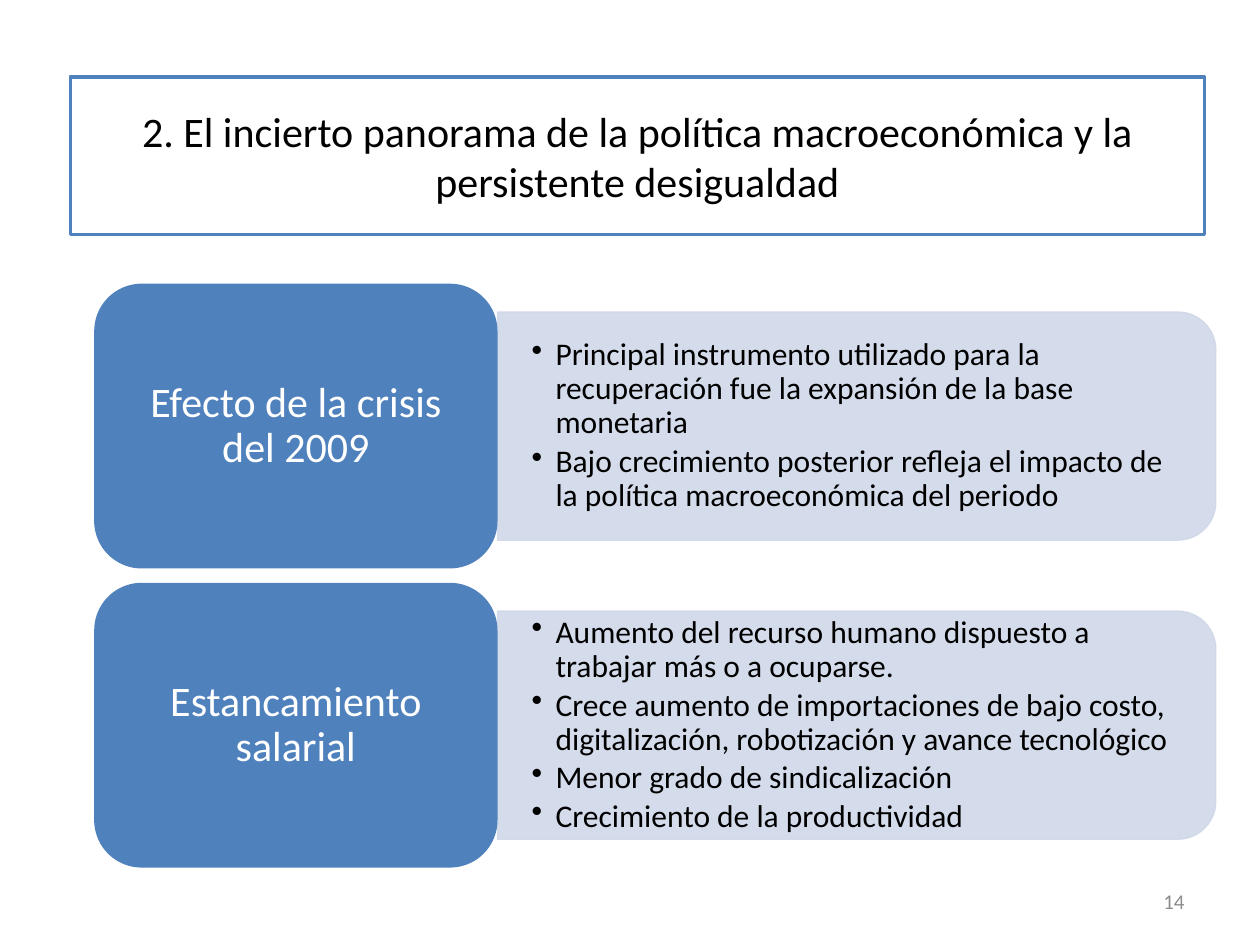
from dataclasses import dataclass

from lxml.etree import SubElement
from pptx import Presentation
from pptx.dml.color import RGBColor
from pptx.enum.shapes import MSO_SHAPE
from pptx.enum.text import MSO_ANCHOR, PP_ALIGN
from pptx.oxml.ns import qn
from pptx.util import Cm, Pt

BLUE = RGBColor(0x4F, 0x81, 0xBD)
PALE = RGBColor(0xD0, 0xD8, 0xE8)
GREY = RGBColor(0x8C, 0x8C, 0x8C)
BLACK = RGBColor(0, 0, 0)
WHITE = RGBColor(0xFF, 0xFF, 0xFF)
FONT = "Calibri"

# Row geometry in cm
ROW_TOP, ROW_PITCH = 5.72, 6.03
CARD_LEFT, CARD_W, CARD_H = 1.9, 8.13, 5.74
CARD_PAD = 0.28
PANEL_LEFT, PANEL_W, PANEL_H = CARD_LEFT + CARD_W, 14.48, 4.6
BODY_W, BODY_H = 14.25, 4.14


@dataclass(frozen=True)
class Box:
    left: float
    top: float
    width: float
    height: float

    def emu(self) -> tuple:
        return Cm(self.left), Cm(self.top), Cm(self.width), Cm(self.height)


@dataclass(frozen=True)
class Topic:
    title: str
    points: tuple[str, ...]


TOPICS = (
    Topic("Efecto de la crisis del 2009", (
        "Principal instrumento utilizado para la recuperación fue la expansión de la base monetaria",
        "Bajo crecimiento posterior refleja el impacto de la política macroeconómica del periodo",
    )),
    Topic("Estancamiento salarial", (
        "Aumento del recurso humano dispuesto a trabajar más o a ocuparse.",
        "Crece aumento de importaciones de bajo costo, digitalización, robotización y avance tecnológico",
        "Menor grado de sindicalización",
        "Crecimiento de la productividad",
    )),
)


def write(sp, *texts: str, size: float, color=BLACK, align=PP_ALIGN.LEFT,
          spacing: float = 1.0, after: float = 0, bullet: bool = False,
          inset: tuple[float, float] = (0.25, 0.13)) -> None:
    """Fill a shape with one paragraph per text."""
    tf = sp.text_frame
    tf.word_wrap = True
    tf.vertical_anchor = MSO_ANCHOR.MIDDLE
    tf.margin_left = tf.margin_right = Cm(inset[0])
    tf.margin_top = tf.margin_bottom = Cm(inset[1])
    for i, text in enumerate(texts):
        p = tf.add_paragraph() if i else tf.paragraphs[0]
        p.alignment, p.line_spacing, p.space_after = align, spacing, Pt(after)
        if bullet:
            p.level = 1
            pPr = p._p.get_or_add_pPr()
            pPr.set("marL", str(Cm(0.48)))
            pPr.set("indent", str(Cm(-0.48)))
            SubElement(pPr, qn("a:buChar")).set("char", "•")
        r = p.add_run()
        r.text = text
        r.font.name, r.font.size, r.font.color.rgb = FONT, Pt(size), color


def add_block(slide, kind, box: Box, fill, line=None, width: float = 0.75):
    sp = slide.shapes.add_shape(kind, *box.emu())
    sp.shadow.inherit = False
    sp.fill.solid()
    sp.fill.fore_color.rgb = fill
    if line is None:
        sp.line.fill.background()
    else:
        sp.line.color.rgb = line
        sp.line.width = Pt(width)
    return sp


def add_panel(slide, middle: float) -> None:
    """Pale panel with rounded right corners, made by a quarter turn."""
    centre = PANEL_LEFT + PANEL_W / 2
    box = Box(centre - PANEL_H / 2, middle - PANEL_W / 2, PANEL_H, PANEL_W)
    sp = add_block(slide, MSO_SHAPE.ROUND_2_SAME_RECTANGLE, box, PALE, PALE)
    sp.rotation = 90
    for clr in sp._element.spPr.iter(qn("a:srgbClr")):
        SubElement(clr, qn("a:alpha")).set("val", "90000")


def add_topic(slide, topic: Topic, top: float) -> None:
    middle = top + CARD_H / 2
    # Panel with its points
    add_panel(slide, middle)
    body = Box(PANEL_LEFT, middle - BODY_H / 2, BODY_W, BODY_H)
    write(slide.shapes.add_textbox(*body.emu()), *topic.points, size=18,
          spacing=0.9, after=2.7, bullet=True, inset=(0.69, 0.34))
    # Card with its heading
    add_block(slide, MSO_SHAPE.ROUNDED_RECTANGLE,
              Box(CARD_LEFT, top, CARD_W, CARD_H), BLUE)
    label = Box(CARD_LEFT + CARD_PAD, top + CARD_PAD,
                CARD_W - 2 * CARD_PAD, CARD_H - 2 * CARD_PAD)
    write(slide.shapes.add_textbox(*label.emu()), topic.title, size=24,
          color=WHITE, align=PP_ALIGN.CENTER, spacing=0.9)


def main() -> None:
    prs = Presentation()
    prs.slide_width, prs.slide_height = Cm(25.4), Cm(19.05)
    slide = prs.slides.add_slide(prs.slide_layouts[6])

    # Title
    title = add_block(slide, MSO_SHAPE.RECTANGLE, Box(1.42, 1.55, 22.86, 3.18),
                      WHITE, BLUE, 2)
    write(title, "2. El incierto panorama de la política macroeconómica y la "
          "persistente desigualdad", size=24, align=PP_ALIGN.CENTER)

    # Topics
    for i, topic in enumerate(TOPICS):
        add_topic(slide, topic, ROW_TOP + i * ROW_PITCH)

    # Slide number
    number = slide.shapes.add_textbox(*Box(18.2, 17.66, 5.93, 1.01).emu())
    write(number, "14", size=12, color=GREY, align=PP_ALIGN.RIGHT)

    prs.save("out.pptx")


if __name__ == "__main__":
    main()
